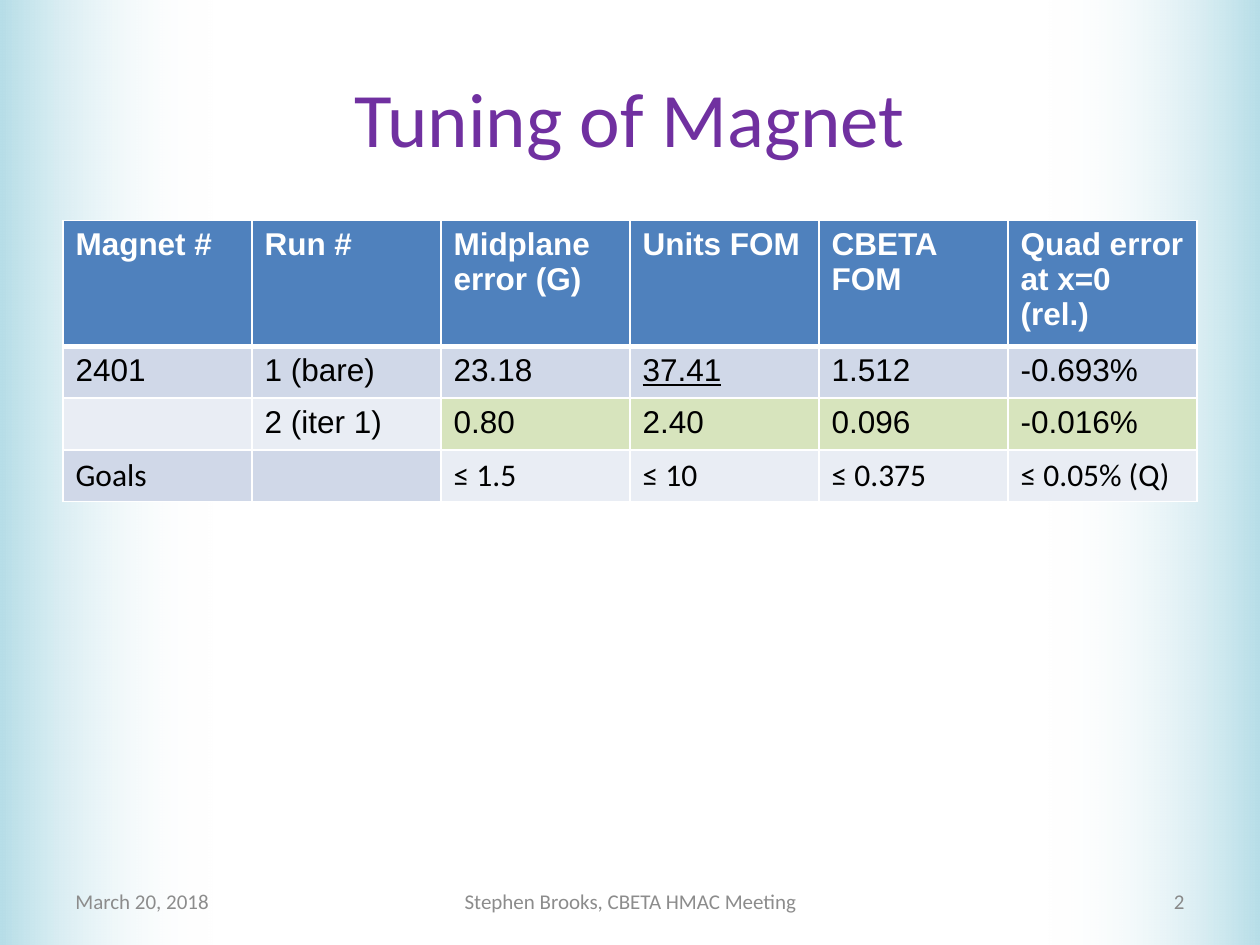
"""Builds the magnet tuning slide with its results table."""
from lxml.etree import SubElement
from pptx import Presentation
from pptx.dml.color import RGBColor
from pptx.enum.shapes import MSO_SHAPE
from pptx.enum.text import MSO_ANCHOR, PP_ALIGN
from pptx.oxml import parse_xml
from pptx.oxml.ns import nsdecls, qn
from pptx.util import Inches, Pt

TITLE = "Tuning of Magnet"
HEADER = ["Magnet #", "Run #", "Midplane error (G)", "Units FOM", "CBETA FOM",
          "Quad error at x=0 (rel.)"]
RUNS = [
    ["2401", "1 (bare)", "23.18", "37.41", "1.512", "-0.693%"],
    ["", "2 (iter 1)", "0.80", "2.40", "0.096", "-0.016%"],
]
GOALS = ["Goals", "", "≤ 1.5", "≤ 10", "≤ 0.375", "≤ 0.05% (Q)"]
FOOTER = [
    ("March 20, 2018", 0.5, 2.33, PP_ALIGN.LEFT, "date"),
    ("Stephen Brooks, CBETA HMAC Meeting", 3.42, 3.17, PP_ALIGN.CENTER, "date"),
    ("2", 7.17, 2.33, PP_ALIGN.RIGHT, "number"),
]
UNDERLINED = {"37.41"}
LABEL_COLS = 2

THEME = {
    "colors": {"title": "7030A0", "date": "8C8C8C", "number": "898989", "edge": "B7DEE8",
               "white": "FFFFFF", "text": "000000", "header": "4F81BD", "dark": "D0D8E8",
               "light": "E9EDF4", "pass": "D7E4BD"},
    "title": {"name": "Calibri", "size": Pt(44)},
    "footer": {"name": "Calibri", "size": Pt(12)},
    "header": {"name": "Arial", "size": Pt(18), "bold": True},
    "run": {"name": "Arial", "size": Pt(18), "bold": False},
    "goal": {"name": "Calibri", "size": Pt(18), "bold": False},
}


def rgb(name):
    return RGBColor.from_string(THEME["colors"][name])


def write(tf, text, style, color, **extra):
    p = tf.paragraphs[0]
    r = p.add_run()
    r.text = text
    for key, value in {**THEME[style], **extra}.items():
        setattr(r.font, key, value)
    r.font.color.rgb = rgb(color)
    return p


def add_text(s, text, box, style, color, align):
    tf = s.shapes.add_textbox(*map(Inches, box)).text_frame
    for key, value in {"word_wrap": True, "vertical_anchor": MSO_ANCHOR.MIDDLE}.items():
        setattr(tf, key, value)
    write(tf, text, style, color).alignment = align


def add_edge(s, left, rotation):
    sp = s.shapes.add_shape(MSO_SHAPE.RECTANGLE, *map(Inches, (left, 0, 1.69, 7.5)))
    sp.rotation = rotation
    sp.shadow.inherit = False
    sp.line.fill.background()
    sp.fill.gradient()
    sp.fill.gradient_angle = 0
    for stop, color in zip(sp.fill.gradient_stops, ("edge", "white")):
        stop.color.rgb = rgb(color)
    last = list(sp.fill._xPr.iter(qn("a:srgbClr")))[-1]
    SubElement(last, qn("a:alpha"), val="0")


def add_borders(cell, bottom):
    tcPr = cell._tc.get_or_add_tcPr()
    for i, (side, width) in enumerate({"L": 1, "R": 1, "T": 1, "B": bottom}.items()):
        tcPr.insert(i, parse_xml(
            f'<a:ln{side} {nsdecls("a")} w="{Pt(width)}"><a:solidFill>'
            f'<a:srgbClr val="{THEME["colors"]["white"]}"/></a:solidFill></a:ln{side}>'))


def add_results(s):
    rows = [("header", HEADER, "header", "header"), ("run", RUNS[0], "dark", "dark"),
            ("run", RUNS[1], "light", "pass"), ("goal", GOALS, "dark", "light")]
    tbl = s.shapes.add_table(len(rows), len(HEADER), *map(Inches, (0.5, 1.75, 9, 1.64))).table
    for i, (style, texts, label_fill, value_fill) in enumerate(rows):
        head = style == "header"
        tbl.rows[i].height = Inches(0.41)
        for j, text in enumerate(texts):
            cell = tbl.cell(i, j)
            cell.fill.solid()
            cell.fill.fore_color.rgb = rgb(
                label_fill if j < LABEL_COLS and text != "2 (iter 1)" else
                label_fill if j < LABEL_COLS else value_fill)
            add_borders(cell, 3 if head else 1)
            if text:
                write(cell.text_frame, text, style, "white" if head else "text",
                      underline=text in UNDERLINED)


def main():
    prs = Presentation()
    prs.slide_width, prs.slide_height = Inches(10), Inches(7.5)
    s = prs.slides.add_slide(prs.slide_layouts[6])
    s.background.fill.solid()
    s.background.fill.fore_color.rgb = rgb("white")
    for left, rotation in ((8.31, 180), (0, 0)):
        add_edge(s, left, rotation)
    add_text(s, TITLE, (0.5, 0.3, 9, 1.25), "title", "title", PP_ALIGN.CENTER)
    add_results(s)
    for text, left, width, align, color in FOOTER:
        add_text(s, text, (left, 6.95, width, 0.4), "footer", color, align)
    prs.save("out.pptx")


if __name__ == "__main__":
    main()
